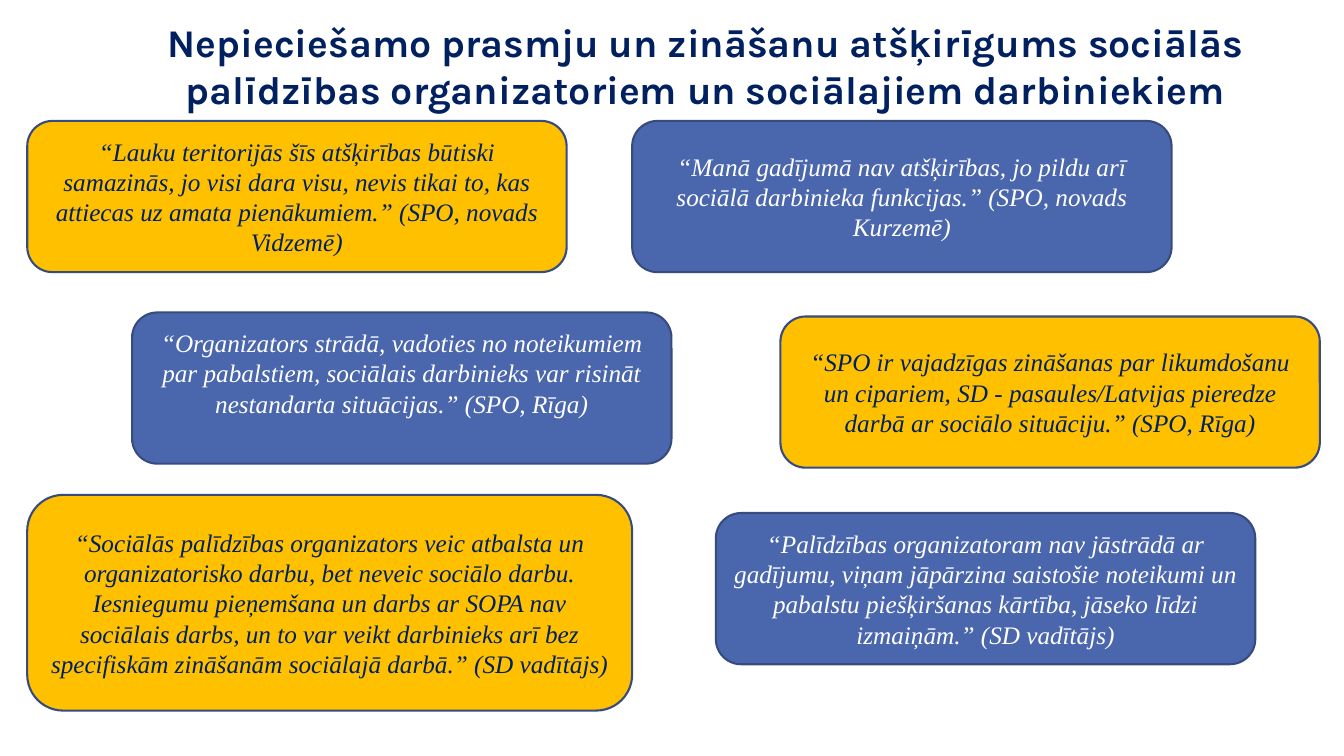
from pptx import Presentation
from pptx.dml.color import RGBColor
from pptx.enum.shapes import MSO_SHAPE
from pptx.enum.text import MSO_ANCHOR, PP_ALIGN
from pptx.util import Inches, Pt

ROUNDED = MSO_SHAPE.ROUNDED_RECTANGLE
TOP, MIDDLE = MSO_ANCHOR.TOP, MSO_ANCHOR.MIDDLE
CENTER = PP_ALIGN.CENTER

NAVY, WHITE, BLUE, GOLD, OUTLINE = "002060", "FFFFFF", "4A66AC", "FFC000", "374B7F"
TITLE_FONT = {"name": "Karla", "size": Pt(28), "bold": True}
QUOTE_FONT = {"name": "Times New Roman", "size": Pt(18), "italic": True}
QUOTE_WIDTH, QUOTE_HEIGHT = 5.35, 1.5

TITLE = ("Nepieciešamo prasmju un zināšanu atšķirīgums sociālās palīdzības "
         "organizatoriem un sociālajiem darbiniekiem")
QUOTES = [
    {"left": 1.31, "top": 3.1, "fill": BLUE, "bottom_margin": 0.35,
     "text": "“Organizators strādā, vadoties no noteikumiem par pabalstiem, sociālais "
             "darbinieks var risināt nestandarta situācijas.” (SPO, Rīga)"},
    {"left": 6.27, "top": 1.2, "fill": BLUE,
     "text": "“Manā gadījumā nav atšķirības, jo pildu arī sociālā darbinieka "
             "funkcijas.” (SPO, novads Kurzemē)"},
    {"left": 7.74, "top": 3.14, "fill": GOLD,
     "text": "“SPO ir vajadzīgas zināšanas par likumdošanu un cipariem, SD - "
             "pasaules/Latvijas pieredze darbā ar sociālo situāciju.” (SPO, Rīga)"},
    {"left": 0.27, "top": 1.2, "fill": GOLD,
     "text": "“Lauku teritorijās šīs atšķirības būtiski samazinās, jo visi dara visu, "
             "nevis tikai to, kas attiecas uz amata pienākumiem.” (SPO, novads Vidzemē)"},
    {"left": 7.1, "top": 5.09, "fill": BLUE,
     "text": "“Palīdzības organizatoram nav jāstrādā ar gadījumu, viņam jāpārzina "
             "saistošie noteikumi un pabalstu piešķiršanas kārtība, jāseko līdzi "
             "izmaiņām.” (SD vadītājs)"},
    {"left": 0.27, "top": 4.91, "fill": GOLD, "width": 6, "height": 2.14,
     "text": "“Sociālās palīdzības organizators veic atbalsta un organizatorisko darbu, "
             "bet neveic sociālo darbu. Iesniegumu pieņemšana un darbs ar SOPA nav "
             "sociālais darbs, un to var veikt darbinieks arī bez specifiskām zināšanām "
             "sociālajā darbā.” (SD vadītājs)"},
]


def color(value):
    return RGBColor.from_string(value)


class QuotePage:
    def __init__(self, deck):
        self.page = deck.slides.add_slide(deck.slide_layouts[6])

    def add_text(self, box, text, style, ink, anchor):
        frame = box.text_frame
        frame.word_wrap = True
        frame.vertical_anchor = anchor
        para = frame.paragraphs[0]
        para.alignment = CENTER
        span = para.add_run()
        span.text = text
        for name, value in style.items():
            setattr(span.font, name, value)
        span.font.color.rgb = color(ink)

    def add_title(self, text, left, top, width, height):
        box = self.page.shapes.add_textbox(*map(Inches, (left, top, width, height)))
        self.add_text(box, text, TITLE_FONT, NAVY, TOP)

    def add_quote(self, text, left, top, fill, width=QUOTE_WIDTH, height=QUOTE_HEIGHT,
                  bottom_margin=0.05):
        box = self.page.shapes.add_shape(
            ROUNDED, *map(Inches, (left, top, width, height)))
        box.shadow.inherit = False
        box.fill.solid()
        box.fill.fore_color.rgb = color(fill)
        box.line.color.rgb = color(OUTLINE)
        box.line.width = Pt(1.5)
        box.text_frame.margin_bottom = Inches(bottom_margin)
        self.add_text(box, text, QUOTE_FONT, WHITE if fill == BLUE else NAVY, MIDDLE)


def main():
    deck = Presentation()
    deck.slide_width, deck.slide_height = Inches(13.33), Inches(7.5)
    page = QuotePage(deck)
    page.add_title(TITLE, 0.92, 0.13, 12.15, 1.5)
    for quote in QUOTES:
        page.add_quote(**quote)
    deck.save("out.pptx")


if __name__ == "__main__":
    main()
